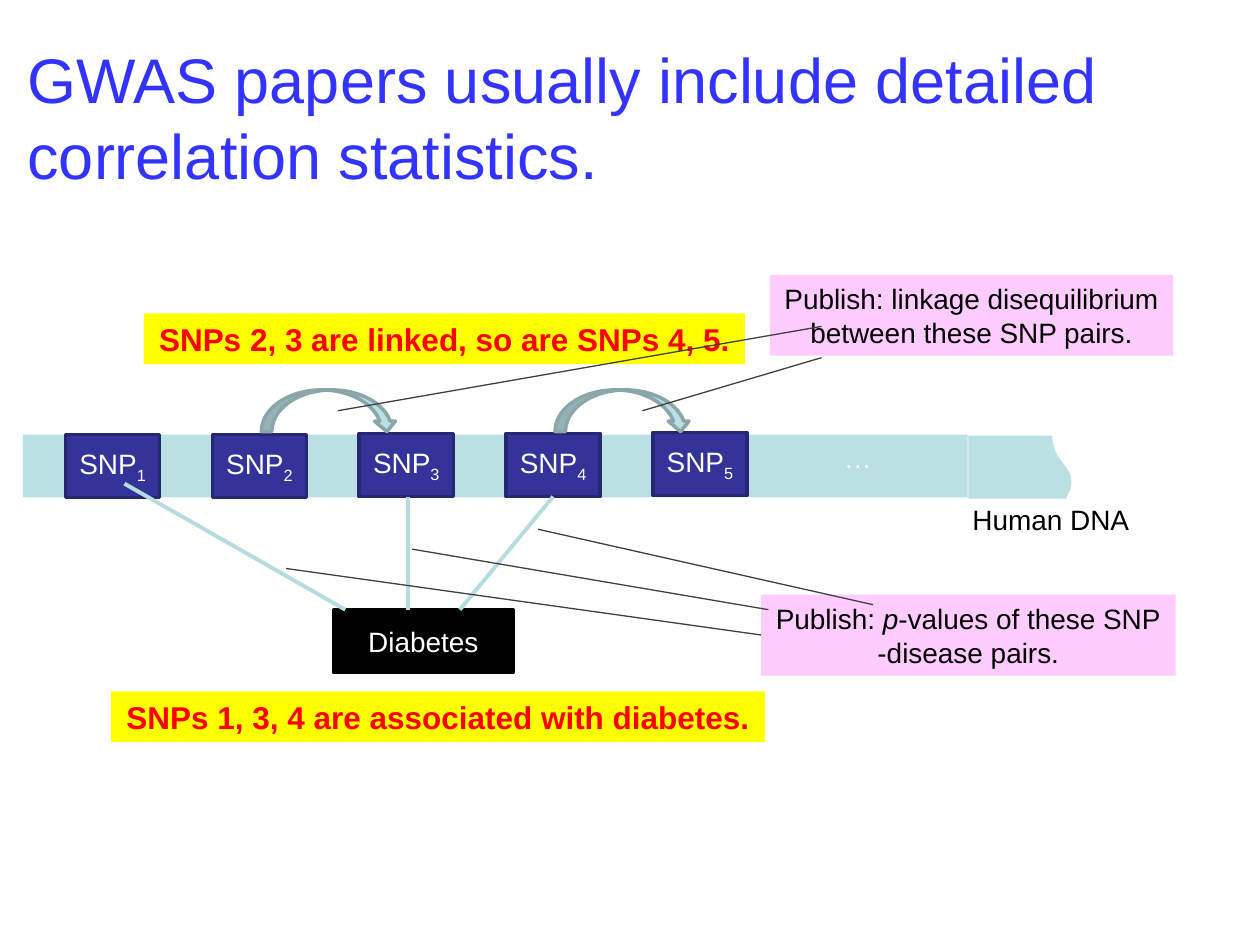
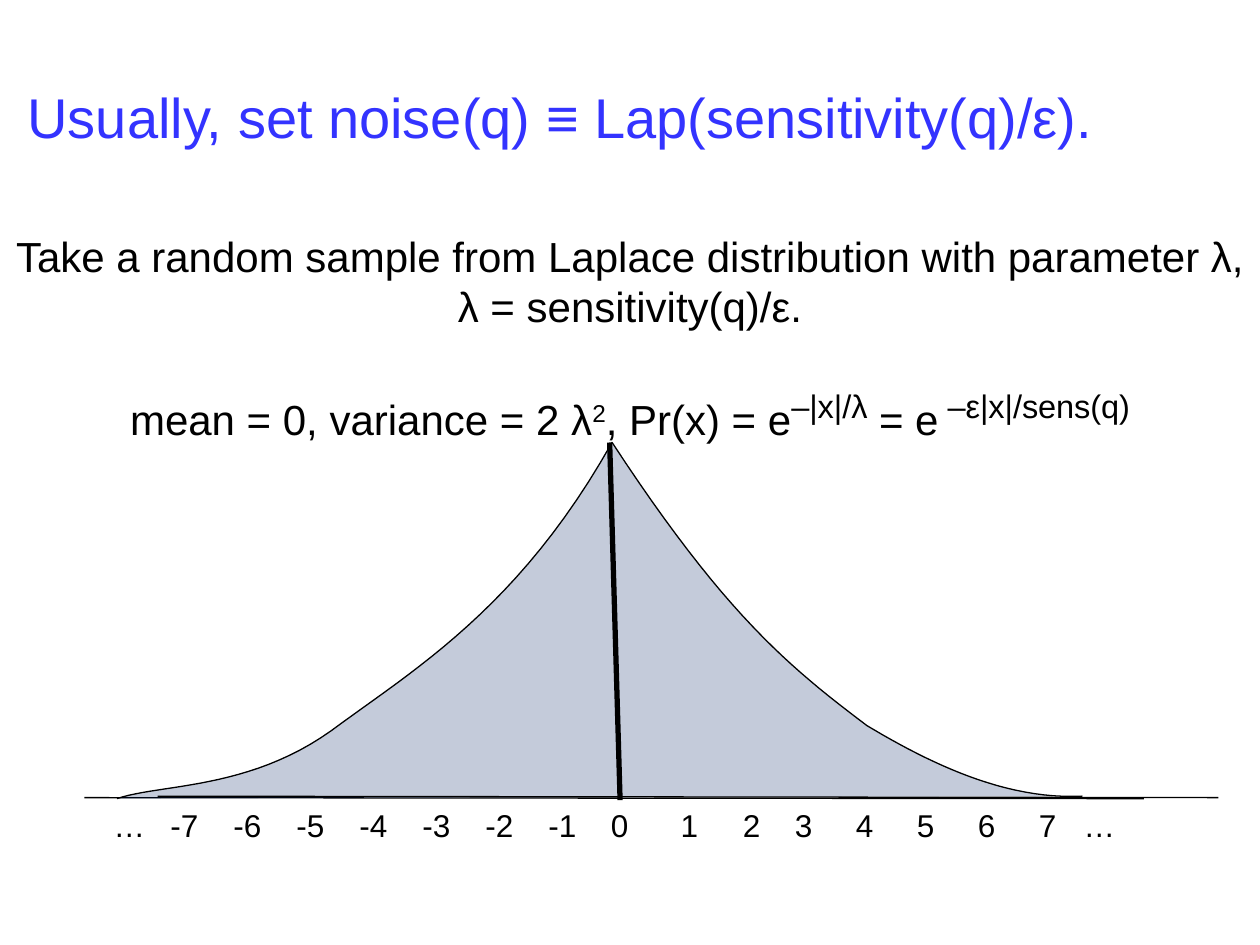
from lxml.etree import SubElement
from pptx import Presentation
from pptx.dml.color import RGBColor
from pptx.enum.shapes import MSO_CONNECTOR as Link, MSO_SHAPE as Kind
from pptx.enum.text import MSO_ANCHOR as Anchor, PP_ALIGN as Align
from pptx.oxml.ns import qn
from pptx.util import Cm, Pt

FONT = "Arial"
BLACK, WHITE, RED = "000000", "FFFFFF", "FF0000"
TITLE, NAVY, EDGE = "3333FF", "333399", "262671"
AQUA, LINK, ARC = "BBE0E3", "B6DCDF", "8AA6A8"
YELLOW, PINK, GREY, HILL = "FFFF00", "FFCCFF", "404040", "002060"


def rgb(code):
    return RGBColor.from_string(code)


def add_run(para, text, size, color=BLACK, bold=False, italic=False, base=0):
    """Add one run; base is the raise (or drop) in percent."""
    run = para.add_run()
    run.text = text
    font = run.font
    font.name, font.size, font.bold, font.italic = FONT, Pt(size), bold, italic
    font.color.rgb = rgb(color)
    if base:
        run._r.get_or_add_rPr().set("baseline", str(base * 1000))


def write(frame, lines, size, color=BLACK, bold=False, wrap=True,
          align=Align.CENTER, anchor=Anchor.MIDDLE):
    """Fill a frame with lines, each a list of (text, run options)."""
    frame.word_wrap = wrap
    frame.vertical_anchor = anchor
    for i, line in enumerate(lines):
        para = frame.add_paragraph() if i else frame.paragraphs[0]
        para.alignment = align
        for text, opts in line:
            add_run(para, text, **{"size": size, "color": color, "bold": bold, **opts})


def plain(*texts):
    return [[(text, {})] for text in texts]


def paint(shape, fill, edge=None, width=2):
    shape.shadow.inherit = False
    shape.fill.solid()
    shape.fill.fore_color.rgb = rgb(fill)
    if edge:
        shape.line.color.rgb = rgb(edge)
        shape.line.width = Pt(width)
    else:
        shape.line.fill.background()


def add_form(slide, box, fill, edge=None, kind=Kind.RECTANGLE, turn=0):
    form = slide.shapes.add_shape(kind, *map(Cm, box))
    paint(form, fill, edge)
    form.rotation = turn
    return form


def add_note(slide, box, fill, lines, size, **style):
    """Add a coloured label whose text keeps its own line breaks."""
    note = add_form(slide, box, fill)
    write(note.text_frame, lines, size, wrap=False, **style)


def add_node(slide, box, fill, edge, line):
    node = add_form(slide, box, fill, edge)
    write(node.text_frame, [line], 16, WHITE)


def add_text(slide, box, lines, size, **style):
    frame = slide.shapes.add_textbox(*map(Cm, box)).text_frame
    write(frame, lines, size, anchor=Anchor.TOP, **style)
    return frame


def add_line(slide, ends, color, width):
    line = slide.shapes.add_connector(Link.STRAIGHT, *map(Cm, ends))
    line.line.color.rgb = rgb(color)
    line.line.width = Pt(width)
    SubElement(line._element.spPr, qn("a:effectLst"))


def add_slide(deck, text, size):
    slide = deck.slides.add_slide(deck.slide_layouts[5])
    title = slide.shapes.title
    title.left, title.top, title.width, title.height = map(Cm, (0.3, 0.76, 24.61, 3.18))
    write(title.text_frame, plain(text), size, TITLE, align=Align.LEFT)
    return slide


def bend(start, ctrl1, ctrl2, end, steps=24):
    """Give the points of a cubic curve after its start."""
    points = []
    for i in range(1, steps + 1):
        t = i / steps
        u = 1 - t
        points.append(tuple(
            Cm(u**3 * a + 3 * u * u * t * b + 3 * u * t * t * c + t**3 * d)
            for a, b, c, d in zip(start, ctrl1, ctrl2, end)))
    return points


def add_hill(slide):
    """Draw the two-sided density curve as a see-through area."""
    start = (2.36, 16.1)
    arcs = [((3.25, 15.8), (5, 15.93), (6.68, 14.73)),
            ((8.33, 13.51), (10.46, 12.27), (12.34, 8.92)),
            ((14.6, 12.37), (15.9, 13.44), (17.48, 14.63)),
            ((18.75, 15.39), (20.27, 16.13), (21.82, 16.05))]
    pen = slide.shapes.build_freeform(*map(Cm, start))
    for arc in arcs:
        pen.add_line_segments(bend(start, *arc), close=False)
        start = arc[-1]
    hill = pen.convert_to_shape()
    paint(hill, HILL, BLACK, 0.75)
    tint = hill._element.spPr.find(qn("a:solidFill"))[0]
    SubElement(tint, qn("a:alpha")).set("val", "23000")


def add_ticks(slide):
    """Write the axis numbers, each centred on a tab stop."""
    stops = [0.66, *(1.77 + 1.27 * i for i in range(7)), 10.54, 11.95, 13.2,
             *(14.25 + 1.23 * i for i in range(5)), 20.21]
    marks = ["…", *map(str, range(-7, 8)), "…"]
    line = [("\t" + mark, {}) for mark in marks]
    frame = add_text(slide, (1.7, 16.13, 21.41, 1.02), [line], 18, align=Align.LEFT)
    tabs = SubElement(frame.paragraphs[0]._p.get_or_add_pPr(), qn("a:tabLst"))
    for stop in stops:
        tab = SubElement(tabs, qn("a:tab"))
        tab.set("pos", str(int(Cm(stop))))
        tab.set("algn", "ctr")


def draw_genes(deck):
    slide = add_slide(
        deck, "GWAS papers usually include detailed correlation statistics.", 36)
    facts = [((2.9, 6.32, 12.12, 1.02), "SNPs 2, 3 are linked, so are SNPs 4, 5."),
             ((2.24, 13.94, 13.18, 1.02), "SNPs 1, 3, 4 are associated with diabetes.")]
    for box, text in facts:
        add_note(slide, box, YELLOW, plain(text), 18, color=RED, bold=True)

    add_form(slide, (0.46, 8.76, 19.05, 1.27), AQUA)
    add_form(slide, (19.94, 8.36, 1.27, 2.11), AQUA, kind=Kind.FLOWCHART_DOCUMENT, turn=270)
    add_text(slide, (19.33, 10.01, 3.71, 0.94), plain("Human DNA"), 16, wrap=False)
    add_text(slide, (16.76, 8.76, 1.07, 0.94), plain("…"), 16, color=WHITE)
    for i in range(5):
        add_node(slide, (1.32 + 2.96 * i, 8.76 - 0.02 * (i // 2), 1.9, 1.27), NAVY, EDGE,
                 [("SNP", {}), (str(i + 1), {"base": -25})])
    add_node(slide, (6.73, 12.29, 3.61, 1.27), BLACK, BLACK, [("Diabetes", {})])

    for ends in [(8.23, 10.01, 8.23, 12.29), (2.51, 9.75, 6.96, 12.29),
                 (11.15, 10.01, 9.27, 12.29)]:
        add_line(slide, ends, LINK, 2.25)
    for left in (6.22, 12.14):
        add_form(slide, (left, 6.91, 0.84, 2.74), AQUA, ARC, Kind.CURVED_LEFT_ARROW, 270)

    add_note(slide, (15.52, 5.54, 8.13, 1.63), PINK,
             plain("Publish: linkage disequilibrium", "between these SNP pairs."), 16)
    add_note(slide, (15.34, 11.99, 8.36, 1.63), PINK,
             [[("Publish: ", {}), ("p", {"italic": True}), ("-values of these SNP", {})],
              [("-disease pairs.", {})]], 16)
    for ends in [(6.81, 8.28, 16.56, 6.58), (12.95, 8.28, 16.56, 7.21),
                 (5.77, 11.46, 15.34, 12.8), (8.31, 11.07, 15.49, 12.29),
                 (10.85, 10.67, 17.6, 12.19)]:
        # The first two start at the linkage note, the rest at the p-value note.
        add_line(slide, ends, GREY, 0.75)


def draw_noise(deck):
    slide = add_slide(deck, "Usually, set noise(q) ≡ Lap(sensitivity(q)/ε).", 32)
    add_line(slide, (1.7, 16.08, 23.06, 16.1), BLACK, 0.75)
    add_hill(slide)
    add_line(slide, (3.18, 16.05, 24.56, 16.08), BLACK, 0.75)
    add_line(slide, (12.29, 8.92, 12.5, 16.13), BLACK, 3)

    power = {"size": 32, "base": 30}
    law = [("mean = 0, variance = 2 λ", {}), ("2", {"base": 30}), (", Pr(x) = e", {}),
           ("–|x|/λ", power), (" = e", {}), (" –ε|x|/sens(q)", power)]
    intro = plain("Take a random sample from Laplace distribution with parameter λ,",
                  "λ = sensitivity(q)/ε.")
    frame = add_text(slide, (0, 4.52, 25.4, 5.38), [*intro, law], 24)
    frame.paragraphs[-1].space_before = Pt(27.6)
    add_ticks(slide)


def main():
    deck = Presentation()
    deck.slide_width, deck.slide_height = Cm(25.4), Cm(19.05)
    draw_genes(deck)
    draw_noise(deck)
    deck.save("out.pptx")


if __name__ == "__main__":
    main()
